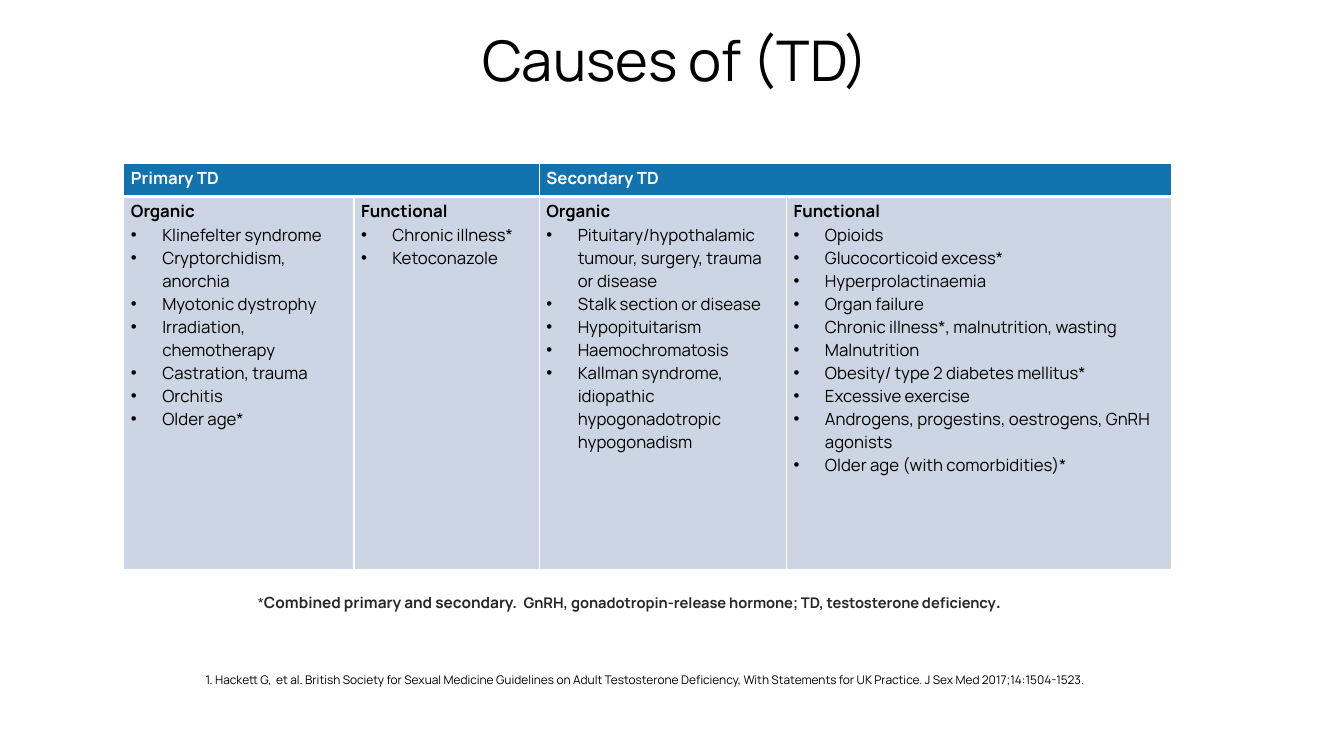
from lxml.etree import SubElement
from pptx import Presentation
from pptx.dml.color import RGBColor
from pptx.enum.text import MSO_ANCHOR, PP_ALIGN
from pptx.oxml.ns import qn
from pptx.util import Cm, Pt

PRIMARY_ORGANIC = ["Klinefelter syndrome", "Cryptorchidism, anorchia", "Myotonic dystrophy",
                   "Irradiation, chemotherapy", "Castration, trauma", "Orchitis", "Older age*"]
PRIMARY_FUNCTIONAL = ["Chronic illness*", "Ketoconazole"]
SECONDARY_ORGANIC = ["Pituitary/hypothalamic tumour, surgery, trauma or disease",
                     "Stalk section or disease", "Hypopituitarism", "Haemochromatosis",
                     "Kallman syndrome, idiopathic hypogonadotropic hypogonadism"]
SECONDARY_FUNCTIONAL = ["Opioids", "Glucocorticoid excess*", "Hyperprolactinaemia",
                        "Organ failure", "Chronic illness*, malnutrition, wasting",
                        "Malnutrition", "Obesity/ type 2 diabetes mellitus*",
                        "Excessive exercise",
                        "Androgens, progestins, oestrogens, GnRH agonists",
                        "Older age (with comorbidities)*"]
GROUPS = ["Primary TD", "Secondary TD"]
CAUSES = [("Organic", PRIMARY_ORGANIC), ("Functional", PRIMARY_FUNCTIONAL),
          ("Organic", SECONDARY_ORGANIC), ("Functional", SECONDARY_FUNCTIONAL)]


def color(value):
    return RGBColor.from_string(value)


def add_text(paragraph, text, size=12, fill="000000", bold=False, font="Manrope"):
    run = paragraph.add_run()
    run.text = text
    run.font.size = Pt(size)
    run.font.name = font
    run.font.bold = bold
    run.font.color.rgb = color(fill)


def add_bullet(paragraph):
    properties = paragraph._p.get_or_add_pPr()
    properties.set("marL", str(Cm(0.79)))
    properties.set("indent", str(-Cm(0.79)))
    SubElement(properties, qn("a:buFont")).set("typeface", "Arial")
    SubElement(properties, qn("a:buChar")).set("char", "•")


class CausesSlide:
    header_fill = "1272AE"
    body_fill = "CCD5E3"
    border = "FFFFFF"

    def __init__(self, presentation):
        self.slide = presentation.slides.add_slide(presentation.slide_layouts[6])

    def text_box(self, left, top, width, height, anchor=MSO_ANCHOR.TOP,
                 align=PP_ALIGN.LEFT, margins=(0.25, 0.13, 0.25, 0.13)):
        """Add an empty text box and return its first paragraph."""
        shape = self.slide.shapes.add_textbox(Cm(left), Cm(top), Cm(width), Cm(height))
        frame = shape.text_frame
        frame.word_wrap = True
        frame.vertical_anchor = anchor
        (frame.margin_left, frame.margin_top,
         frame.margin_right, frame.margin_bottom) = map(Cm, margins)
        paragraph = frame.paragraphs[0]
        paragraph.alignment = align
        return paragraph

    def style_cell(self, cell, fill, top=1, bottom=1):
        cell.margin_left = cell.margin_right = Cm(0.18)
        cell.margin_top = cell.margin_bottom = Cm(0.09)
        properties = cell._tc.get_or_add_tcPr()
        for side, width in (("L", 1), ("R", 1), ("T", top), ("B", bottom)):
            line = SubElement(properties, qn(f"a:ln{side}"), w=str(Pt(width)))
            line_fill = SubElement(line, qn("a:solidFill"))
            SubElement(line_fill, qn("a:srgbClr"), val=self.border)
        cell.fill.solid()
        cell.fill.fore_color.rgb = color(fill)

    def causes_table(self, left, top, widths, heights):
        frame = self.slide.shapes.add_table(len(heights), len(widths), Cm(left), Cm(top),
                                            Cm(sum(widths)), Cm(sum(heights)))
        table = frame.table
        for column, width in zip(table.columns, widths):
            column.width = Cm(width)
        for row, height in zip(table.rows, heights):
            row.height = Cm(height)
        for index, (heading, causes) in enumerate(CAUSES):
            self.style_cell(table.cell(0, index), self.header_fill, bottom=3)
            body = table.cell(1, index)
            self.style_cell(body, self.body_fill, top=3)
            add_text(body.text_frame.paragraphs[0], heading, bold=True)
            for cause in causes:
                paragraph = body.text_frame.add_paragraph()
                add_bullet(paragraph)
                add_text(paragraph, cause)
        for index, group in enumerate(GROUPS):
            header = table.cell(0, 2 * index)
            header.merge(table.cell(0, 2 * index + 1))
            add_text(header.text_frame.paragraphs[0], group, fill="FFFFFF", bold=True)


def main():
    presentation = Presentation()
    presentation.slide_width = Cm(33.87)
    presentation.slide_height = Cm(19.05)
    page = CausesSlide(presentation)

    title = page.text_box(4.39, 0, 25.25, 3.28, MSO_ANCHOR.MIDDLE, PP_ALIGN.CENTER)
    title.line_spacing = 0.8
    add_text(title, "Causes of (TD)", size=40)

    page.causes_table(3.12, 4.11, widths=[5.8, 4.67, 6.23, 9.7], heights=[0.84, 9.4])

    footnote = page.text_box(6.5, 14.94, 22.94, 0.48, MSO_ANCHOR.BOTTOM,
                             margins=(0, 0.03, 0, 0))
    gray = "272727"
    add_text(footnote, "*", size=10, fill=gray)
    add_text(footnote, "Combined primary and secondary.  ", size=11, fill=gray, bold=True)
    add_text(footnote, "GnRH, gonadotropin-release hormone; TD, testosterone deficiency",
             size=10.5, fill=gray, bold=True)
    add_text(footnote, ".", size=10.5, fill=gray, bold=True, font="Arial")

    reference = page.text_box(3.76, 16.81, 25.04, 0.61, align=PP_ALIGN.CENTER)
    add_text(reference, "1. Hackett G,  et al. British Society for Sexual Medicine Guidelines "
             "on Adult Testosterone Deficiency, With Statements for UK Practice. "
             "J Sex Med 2017;14:1504-1523", size=8.5)
    add_text(reference, ". ", size=8)

    presentation.save("out.pptx")


if __name__ == "__main__":
    main()
